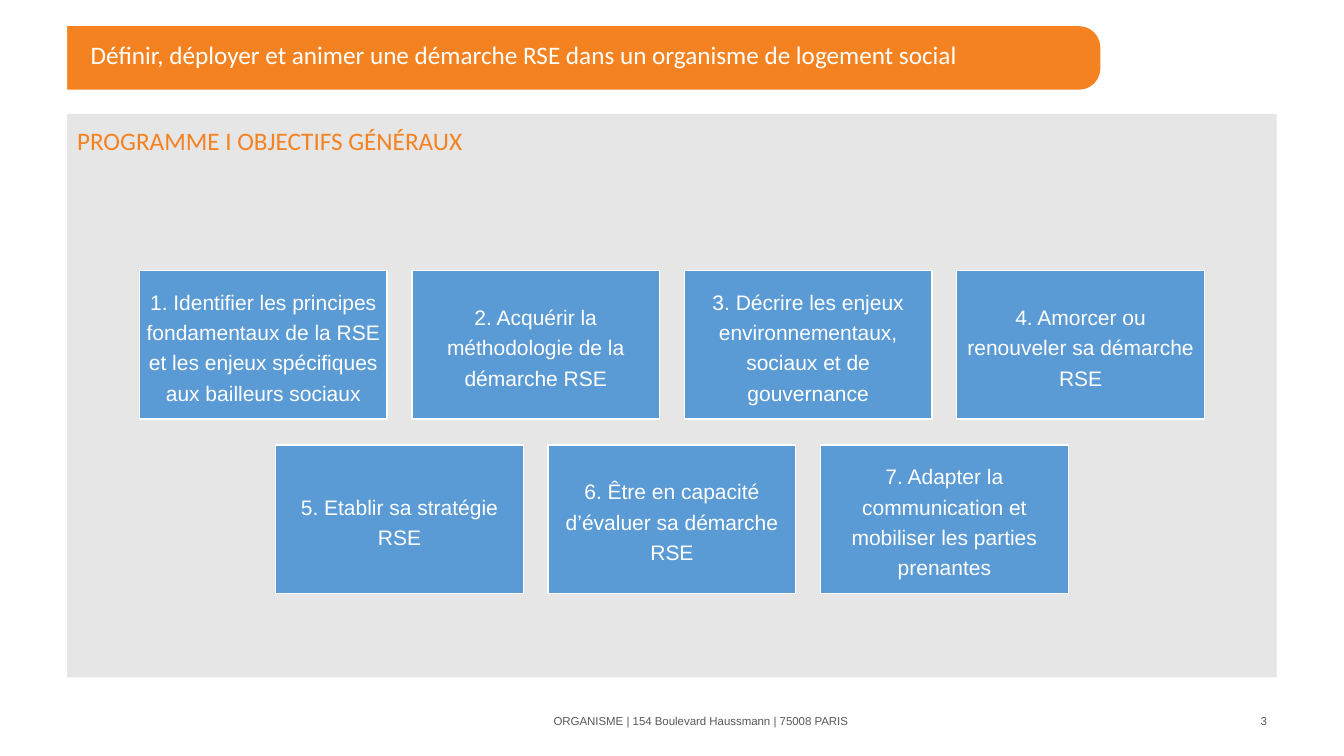
import pptx
import pptx.util
import pptx.dml.color
import pptx.enum.shapes
import pptx.enum.text

Pt = pptx.util.Pt
ALIGN = pptx.enum.text.PP_ALIGN
ANCHOR = pptx.enum.text.MSO_ANCHOR
SHAPE = pptx.enum.shapes.MSO_SHAPE

COLORS = {
    "orange": "F58221",
    "panel": "E7E6E6",
    "tile": "5B9BD5",
    "white": "FFFFFF",
    "footer": "58595B",
}
SLIDE_W, SLIDE_H = 960, 540

OBJECTIVES = [
    [
        "1. Identifier les principes fondamentaux de la RSE et les enjeux "
        "spécifiques aux bailleurs sociaux",
        "2. Acquérir la méthodologie de la démarche RSE",
        "3. Décrire les enjeux environnementaux, sociaux et de gouvernance",
        "4. Amorcer ou renouveler sa démarche RSE",
    ],
    [
        "5. Etablir sa stratégie RSE",
        "6. Être en capacité d’évaluer sa démarche RSE",
        "7. Adapter la communication et mobiliser les parties prenantes",
    ],
]


def rgb(name):
    return pptx.dml.color.RGBColor.from_string(COLORS[name])


def add_block(slide, kind, box, fill, line=None):
    block = slide.shapes.add_shape(kind, *map(Pt, box))
    block.shadow.inherit = False
    block.fill.solid()
    block.fill.fore_color.rgb = rgb(fill)
    if line:
        block.line.color.rgb = rgb(line)
        block.line.width = Pt(1)
    else:
        block.line.fill.background()
    return block


def write(holder, text, font, size, color, align=ALIGN.LEFT,
          anchor=ANCHOR.MIDDLE, spacing=1.0):
    frame = holder.text_frame
    frame.text = text
    frame.word_wrap = True
    frame.auto_size = pptx.enum.text.MSO_AUTO_SIZE.NONE
    frame.vertical_anchor = anchor
    paragraph = frame.paragraphs[0]
    paragraph.alignment = align
    paragraph.line_spacing = spacing
    paragraph.space_before = Pt(0)
    run_font = paragraph.runs[0].font
    run_font.name = font
    run_font.size = Pt(size)
    run_font.color.rgb = rgb(color)
    return frame


def add_header(slide, box, text):
    left, top, width, height = box
    # Band rounded on the right; a white block squares off its left end
    overhang = 42
    band = add_block(slide, SHAPE.ROUNDED_RECTANGLE,
                     (left - overhang, top, width + overhang, height), "orange")
    band.adjustments[0] = 0.336
    add_block(slide, SHAPE.RECTANGLE, (0, top - 8, left, height + 18), "white")
    # Title, brought in front of the band
    title = slide.shapes.title
    slide.shapes._spTree.append(title._element)
    title.left, title.top = Pt(left + 9.6), Pt(top)
    title.width, title.height = Pt(width - 32), Pt(height - 2)
    write(title, text, "Calibri", 18, "white", spacing=0.9)


def add_objectives(slide, box, heading, rows):
    left, top, width, height = box
    panel = add_block(slide, SHAPE.RECTANGLE, box, "panel")
    write(panel, heading, "Calibri", 18, "orange",
          anchor=ANCHOR.TOP, spacing=1.2)

    # Rows of tiles, each centred in the panel
    tile_w, tile_h, gap = 177, 106.2, 17.6
    first_top = top + 111.8
    for row_index, row in enumerate(rows):
        row_w = len(row) * tile_w + (len(row) - 1) * gap
        row_left = left + (width - row_w) / 2
        row_top = first_top + row_index * (tile_h + gap + 0.8)
        for column, objective in enumerate(row):
            tile_left = row_left + column * (tile_w + gap)
            tile = add_block(slide, SHAPE.RECTANGLE,
                             (tile_left, row_top, tile_w, tile_h),
                             "tile", "white")
            frame = write(tile, objective, "Arial", 15, "white",
                          ALIGN.CENTER, spacing=1.2)
            frame.margin_left = frame.margin_right = Pt(4.5)
            frame.margin_top = frame.margin_bottom = Pt(4.5)
            frame.paragraphs[0].space_after = Pt(5.25)


def add_footer(slide, box, address, number):
    left, top, width, height = box
    address_w, number_w = 365, 216
    parts = [
        (address, left, address_w, ALIGN.CENTER),
        (number, left + width - number_w, number_w, ALIGN.RIGHT),
    ]
    for text, part_left, part_w, align in parts:
        part = slide.shapes.add_textbox(
            Pt(part_left), Pt(top), Pt(part_w), Pt(height))
        write(part, text, "Arial", 8.2, "footer", align)


def main():
    deck = pptx.Presentation()
    deck.slide_width, deck.slide_height = Pt(SLIDE_W), Pt(SLIDE_H)
    slide = deck.slides.add_slide(deck.slide_layouts[5])

    add_header(slide, (48, 18.7, 738, 45.4),
               "Définir, déployer et animer une démarche RSE "
               "dans un organisme de logement social")
    add_objectives(slide, (48, 81.4, 864, 402.5),
                   "PROGRAMME I OBJECTIFS GÉNÉRAUX", OBJECTIVES)
    add_footer(slide, (318.2, 500.4, 594, 28.8),
               "ORGANISME | 154 Boulevard Haussmann | 75008 PARIS", "3")
    deck.save("out.pptx")


if __name__ == "__main__":
    main()
